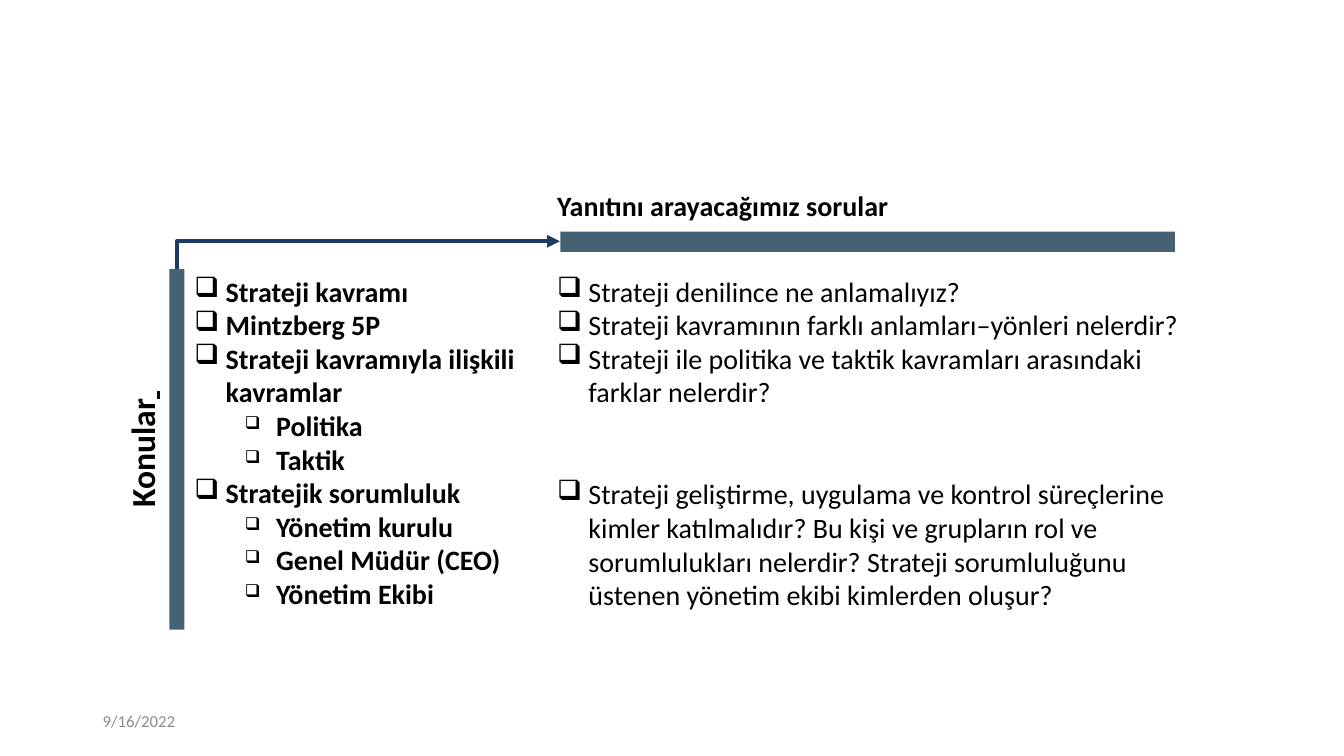
from pptx import Presentation
from pptx.dml.color import RGBColor
from pptx.enum.shapes import MSO_CONNECTOR as Connector, MSO_SHAPE as Shape
from pptx.enum.text import MSO_ANCHOR as Anchor, PP_ALIGN as Align
from pptx.oxml.ns import qn
from pptx.util import Cm, Pt
from lxml.etree import SubElement

BLACK, GREY, SLATE, NAVY = "000000", "8C8C8C", "456173", "203864"

topics = [
    (0, "Strateji kavramı"),
    (0, "Mintzberg 5P"),
    (0, "Strateji kavramıyla ilişkili kavramlar"),
    (1, "Politika"),
    (1, "Taktik"),
    (0, "Stratejik sorumluluk"),
    (1, "Yönetim kurulu"),
    (1, "Genel Müdür (CEO)"),
    (1, "Yönetim Ekibi"),
]
questions = [
    (0, "Strateji denilince ne anlamalıyız?"),
    (0, "Strateji kavramının farklı anlamları–yönleri nelerdir?"),
    (0, "Strateji ile politika ve taktik kavramları arasındaki farklar nelerdir?"),
    (0, "Strateji geliştirme, uygulama ve kontrol süreçlerine kimler katılmalıdır? "
        "Bu kişi ve grupların rol ve sorumlulukları nelerdir? Strateji sorumluluğunu "
        "üstenen yönetim ekibi kimlerden oluşur?"),
]


def color(value):
    return RGBColor.from_string(value)


def add_text(place, text, size=20, bold=False, ink=BLACK):
    """Add a wrapped text box with one formatted run and return it."""
    box = slide.shapes.add_textbox(*map(Cm, place))
    box.text_frame.word_wrap = True
    span = box.text_frame.paragraphs[0].add_run()
    span.text = text
    for name, value in {"name": "Calibri", "size": Pt(size), "bold": bold}.items():
        setattr(span.font, name, value)
    span.font.color.rgb = color(ink)
    return box


deck = Presentation()
deck.slide_width, deck.slide_height = Cm(33.87), Cm(19.05)
slide = deck.slides.add_slide(deck.slide_layouts[6])

# Date and headings
date = add_text((2.34, 17.65, 7.62, 1.02), "9/16/2022", size=12, ink=GREY)
date.text_frame.vertical_anchor = Anchor.MIDDLE
add_text((13.79, 4.62, 9.68, 1.12), "Yanıtını arayacağımız sorular", bold=True)

side_heading = add_text((-0.86, 10.59, 9.07, 1.47), "Konular", size=24, bold=True)
side_heading.rotation = 270
para = side_heading.text_frame.paragraphs[0]
para.alignment = Align.CENTER
span = para.add_run()
span.text = " "
for name, value in {"name": "Calibri", "size": Pt(24), "bold": True, "underline": True}.items():
    setattr(span.font, name, value)

# Bars beside the topics and above the questions
for place in [(4.27, 6.78, 0.38, 9.09), (14.12, 5.84, 15.49, 0.51)]:
    bar = slide.shapes.add_shape(Shape.RECTANGLE, *map(Cm, place))
    bar.shadow.inherit = False
    bar.fill.solid()
    bar.fill.fore_color.rgb = color(SLATE)
    bar.line.fill.background()

# Bulleted columns
for left, width, items, bold in [(4.65, 8.66, topics, True), (13.79, 16.94, questions, False)]:
    box = slide.shapes.add_textbox(Cm(left), Cm(6.78), Cm(width), Cm(8.81))
    frame = box.text_frame
    frame.word_wrap = True
    for index, (level, text) in enumerate(items):
        para = frame.add_paragraph() if index else frame.paragraphs[0]
        para.level = level
        props = para._p.get_or_add_pPr()
        props.set("marL", str(Cm(0.79 + 1.27 * level)))
        props.set("indent", str(Cm(-0.79)))
        if items is questions and index == 3:
            para.space_before = Pt(48.8)  # lines up with "Stratejik sorumluluk"
        if level:
            SubElement(props, qn("a:buSzPct"), val="63000")
        SubElement(props, qn("a:buChar"), char="❑")
        span = para.add_run()
        span.text = text
        for name, value in {"name": "Calibri", "size": Pt(20), "bold": bold}.items():
            setattr(span.font, name, value)
        span.font.color.rgb = color(BLACK)

# One-bend arrow from the topics bar to the questions bar, turned a quarter
arrow = slide.shapes.add_connector(Connector.ELBOW, Cm(9.63), Cm(11.25), Cm(8.94), Cm(1.6))
arrow.line.color.rgb = color(NAVY)
arrow.line.width = Pt(3)
arrow_props = arrow._element.spPr
arrow_props.find(qn("a:xfrm")).set("rot", "5400000")
arrow_props.find(qn("a:prstGeom")).set("prst", "bentConnector2")
SubElement(arrow_props.find(qn("a:ln")), qn("a:tailEnd"), type="triangle")
SubElement(arrow_props, qn("a:effectLst"))

deck.save("out.pptx")
